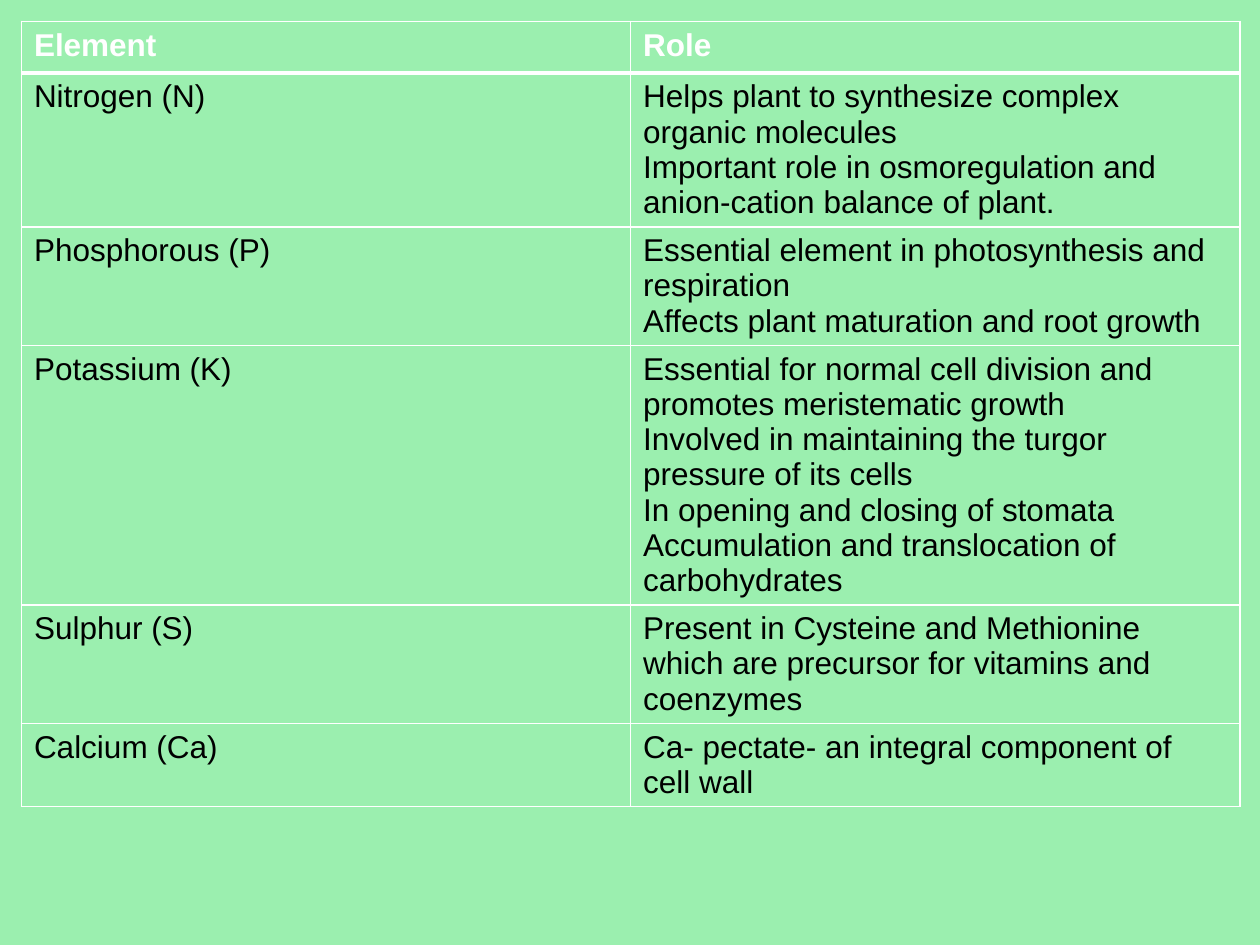
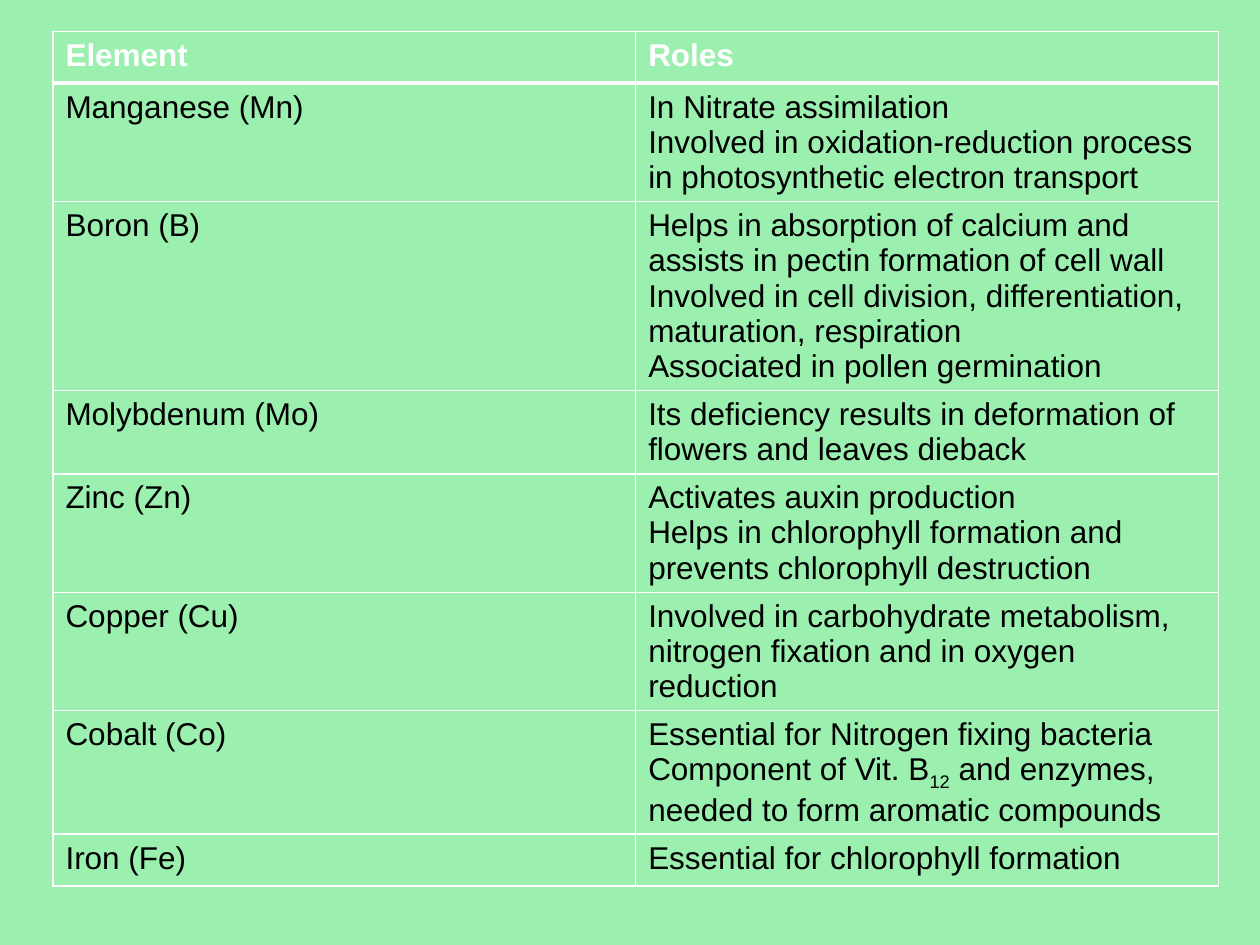
from lxml import etree
from pptx import Presentation
from pptx.dml.color import RGBColor
from pptx.oxml.ns import qn
from pptx.util import Inches, Pt

BACKGROUND = "9BEFAF"
WHITE = "FFFFFF"
BLACK = "000000"
FONT = "Arial"
ROW_HEIGHT = 0.41
THIN, THICK = 1, 3
SUBSCRIPT_MARK = "~"  # text between two marks is set as a subscript

# Each table: left, top, width, height in inches, then its rows; the first row is the header.
TABLES = [
    ((0.17, 0.17, 9.67, 6.61), [
        ("Element", ["Role"]),
        ("Nitrogen (N)", [
            "Helps plant to synthesize complex organic molecules",
            "Important role in osmoregulation and anion-cation balance of plant."]),
        ("Phosphorous (P)", [
            "Essential element in photosynthesis and respiration",
            "Affects plant maturation and root growth"]),
        ("Potassium (K)", [
            "Essential for normal cell division and promotes meristematic growth",
            "Involved in maintaining the turgor pressure of its cells",
            "In opening and closing of stomata",
            "Accumulation and translocation of carbohydrates"]),
        ("Sulphur (S)", [
            "Present in Cysteine and Methionine which are precursor for vitamins and coenzymes"]),
        ("Calcium (Ca)", ["Ca- pectate- an integral component of cell wall"]),
    ]),
    ((0.42, 0.25, 9.25, 7.11), [
        ("Element", ["Roles"]),
        ("Manganese (Mn)", [
            "In Nitrate assimilation",
            "Involved in oxidation-reduction process in photosynthetic electron transport"]),
        ("Boron (B)", [
            "Helps in absorption of calcium and assists in pectin formation of cell wall",
            "Involved in cell division, differentiation, maturation, respiration",
            "Associated in pollen germination"]),
        ("Molybdenum (Mo)", [
            "Its deficiency results in deformation of flowers and leaves dieback"]),
        ("Zinc (Zn)", [
            "Activates auxin production",
            "Helps in chlorophyll formation and prevents chlorophyll destruction"]),
        ("Copper (Cu)", [
            "Involved in carbohydrate metabolism, nitrogen fixation and in oxygen reduction"]),
        ("Cobalt (Co)", [
            "Essential for Nitrogen fixing bacteria",
            "Component of Vit. B~12~ and enzymes, needed to form aromatic compounds"]),
        ("Iron (Fe)", ["Essential for chlorophyll formation"]),
    ]),
]


def set_borders(cell, top, bottom):
    """Draw white borders; top and bottom are widths in points, the sides are thin."""
    properties = cell._tc.get_or_add_tcPr()
    for side, width in (("lnL", THIN), ("lnR", THIN), ("lnT", top), ("lnB", bottom)):
        line = etree.SubElement(properties, qn("a:" + side), w=str(Pt(width)))
        fill = etree.SubElement(line, qn("a:solidFill"))
        etree.SubElement(fill, qn("a:srgbClr"), val=WHITE)


def write_cell(cell, lines, color, bold):
    cell.text_frame.text = "\n".join(lines)
    for paragraph in cell.text_frame.paragraphs:
        pieces = paragraph.text.split(SUBSCRIPT_MARK)
        paragraph.text = pieces[0]
        for piece in pieces[1:]:
            paragraph.add_run().text = piece
        for index, run in enumerate(paragraph.runs):
            run.font.name = FONT
            run.font.size = Pt(18)
            run.font.bold = bold
            run.font.color.rgb = RGBColor.from_string(color)
            if index % 2:
                run.font._element.set("baseline", "-25000")


presentation = Presentation()
presentation.slide_width = Inches(10)
presentation.slide_height = Inches(7.5)
blank_layout = presentation.slide_layouts[6]

for (left, top, width, height), rows in TABLES:
    slide = presentation.slides.add_slide(blank_layout)
    slide.background.fill.solid()
    slide.background.fill.fore_color.rgb = RGBColor.from_string(BACKGROUND)

    frame = slide.shapes.add_table(
        len(rows), 2, Inches(left), Inches(top),
        Inches(width), Inches(ROW_HEIGHT * len(rows)))
    frame.height = Inches(height)  # rows start low and grow with their text
    table = frame.table
    table.horz_banding = False

    for row_index, (element, roles) in enumerate(rows):
        is_header = row_index == 0
        for column, lines in enumerate(([element], roles)):
            cell = table.cell(row_index, column)
            write_cell(cell, lines, WHITE if is_header else BLACK, is_header)
            set_borders(cell, THICK if row_index == 1 else THIN, THICK if is_header else THIN)
            cell.fill.background()

presentation.save("out.pptx")
